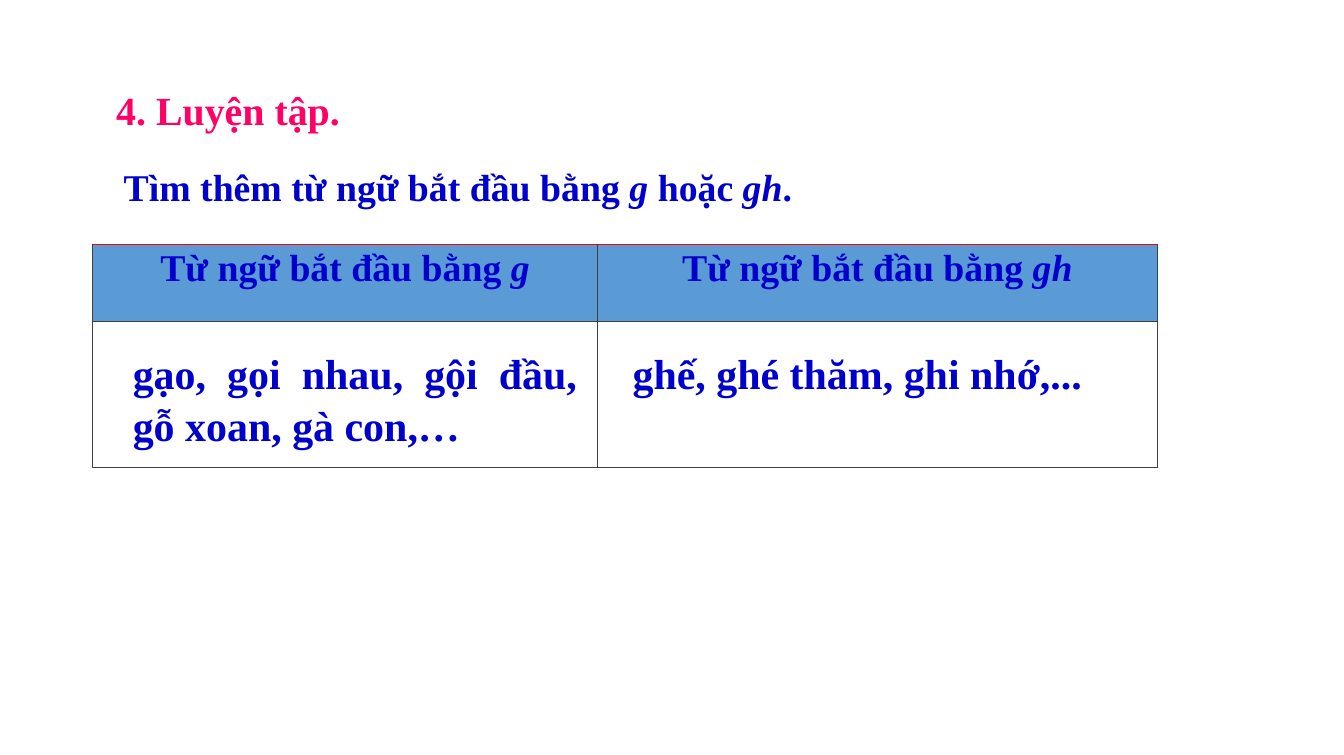
from lxml import etree
from pptx import Presentation
from pptx import util as u
from pptx.dml.color import RGBColor
from pptx.enum import text
from pptx.oxml.ns import qn

WIDTH, HEIGHT = 17.8, 10
THEME = {
    "font": "Times New Roman",
    "blue": "0000CC", "pink": "FF0066", "header": "5B9BD5",
    "top_line": "FF0000", "line": "404040",
    "title": 38, "prompt": 36, "answer": 40,
}
LEFT, JUSTIFY, CENTER = text.PP_ALIGN.LEFT, text.PP_ALIGN.JUSTIFY, text.PP_ALIGN.CENTER

# Runs between asterisks are italic.
HEADERS = ["Từ ngữ bắt đầu bằng *g*", "Từ ngữ bắt đầu bằng *gh*"]
TABLE_LEFT, TABLE_TOP = 1.23, 3.24
COLUMNS, ROWS = [6.68, 7.42], [1.02, 1.93]
ANSWER_TOP = TABLE_TOP + ROWS[0] + 0.27

# text, (left, top, width, height), size, colour, alignment, line spacing
TEXTS = [
    ("4. Luyện tập.", (1.44, 1.08, 4.58, 0.77), "title", "pink", LEFT, 1),
    ("Tìm thêm từ ngữ bắt đầu bằng *g* hoặc *gh*.", (1.54, 2.12, 15.1, 0.77),
     "prompt", "blue", LEFT, 1),
    ("gạo, gọi nhau, gội đầu, gỗ xoan, gà con,…", (1.66, ANSWER_TOP, 6.08, 1.45),
     "answer", "blue", JUSTIFY, 1.04),
    ("ghế, ghé thăm, ghi nhớ,...", (8.28, ANSWER_TOP, 6.5, 0.77),
     "answer", "blue", JUSTIFY, 1.04),
]


def write(frame, content, size, color, alignment, spacing=1):
    paragraph = frame.paragraphs[0]
    paragraph.alignment = alignment
    paragraph.line_spacing = spacing
    for index, part in enumerate(content.split("*")):
        if not part:
            continue
        run = paragraph.add_run()
        run.text = part
        values = {"name": THEME["font"], "size": u.Pt(THEME[size]),
                  "bold": True, "italic": index % 2 == 1}
        for name, value in values.items():
            setattr(run.font, name, value)
        run.font.color.rgb = RGBColor.from_string(THEME[color])


def set_borders(cell, top):
    """Line all four sides; borders must precede the fill in the XML."""
    properties = cell._tc.get_or_add_tcPr()
    for index, side in enumerate(("lnL", "lnR", "lnT", "lnB")):
        line = etree.Element(qn(f"a:{side}"), w=str(u.Pt(1)))
        fill = etree.SubElement(line, qn("a:solidFill"))
        color = top if side == "lnT" else "line"
        etree.SubElement(fill, qn("a:srgbClr"), val=THEME[color])
        properties.insert(index, line)


def add_word_table(slide):
    frame = slide.shapes.add_table(
        len(ROWS), len(COLUMNS), u.Inches(TABLE_LEFT), u.Inches(TABLE_TOP),
        u.Inches(sum(COLUMNS)), u.Inches(sum(ROWS)))
    table = frame.table
    table.first_row = table.horz_banding = False
    for column, width in zip(table.columns, COLUMNS):
        column.width = u.Inches(width)
    for index, (row, height) in enumerate(zip(table.rows, ROWS)):
        row.height = u.Inches(height)
        for cell, header in zip(row.cells, HEADERS):
            if index == 0:
                cell.fill.solid()
                cell.fill.fore_color.rgb = RGBColor.from_string(THEME["header"])
                write(cell.text_frame, header, "prompt", "blue", CENTER)
            else:
                cell.fill.background()
            set_borders(cell, "line" if index else "top_line")


def main():
    presentation = Presentation()
    presentation.slide_width = u.Inches(WIDTH)
    presentation.slide_height = u.Inches(HEIGHT)
    slide = presentation.slides.add_slide(presentation.slide_layouts[6])
    add_word_table(slide)
    for content, box, *style in TEXTS:
        shape = slide.shapes.add_textbox(*map(u.Inches, box))
        shape.text_frame.word_wrap = True
        write(shape.text_frame, content, *style)
    presentation.save("out.pptx")


if __name__ == "__main__":
    main()
